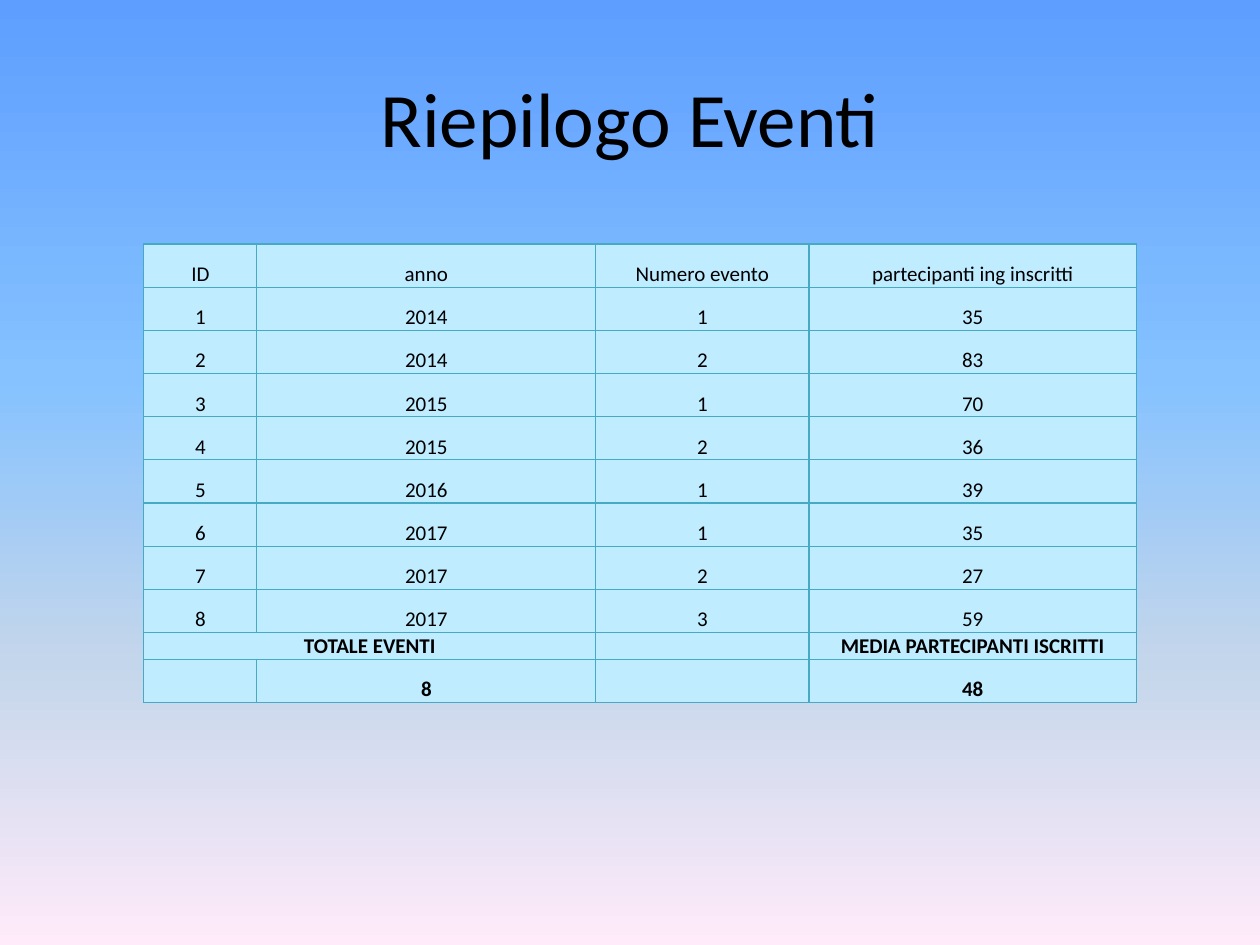
"""Build the event summary slide with its table of yearly events."""
from typing import NamedTuple

from lxml.etree import SubElement as Sub
from pptx import Presentation
from pptx.dml.color import RGBColor
from pptx.enum.text import MSO_ANCHOR as Anchor, PP_ALIGN as Align
from pptx.oxml.ns import qn
from pptx.util import Cm, Pt


class Event(NamedTuple):
    year: int
    number: int
    count: int


class Row(NamedTuple):
    texts: tuple
    bold: bool = False
    height: float = 0.87


FONT = "Calibri"
BLACK, PALE, EDGE = "000000", "BFECFF", "46AAC5"
STOPS = ((0, "5E9EFF"), (40, "85C2FF"), (70, "C4D6EB"), (100, "FFEBFA"))
WIDTHS = (2.28, 6.83, 4.3, 6.6)
EVENTS = (
    Event(2014, 1, 35), Event(2014, 2, 83), Event(2015, 1, 70), Event(2015, 2, 36),
    Event(2016, 1, 39), Event(2017, 1, 35), Event(2017, 2, 27), Event(2017, 3, 59),
)


def color(code: str) -> RGBColor:
    return RGBColor.from_string(code)


def style(frame, size: float, bold: bool = False) -> None:
    for para in frame.paragraphs:
        para.alignment = Align.CENTER
        for run in para.runs:
            font = run.font
            font.name, font.size, font.bold = FONT, Pt(size), bold
            font.color.rgb = color(BLACK)
        if not para.runs:
            Sub(para._p, qn("a:endParaRPr"), sz=str(int(size * 100)))


def paint(slide) -> None:
    fill = slide.background.fill
    fill.gradient()
    fill.gradient_angle = 270
    stops = next(slide._element.iter(qn("a:gsLst")))
    for old in list(stops):
        stops.remove(old)
    for place, code in STOPS:
        stop = Sub(stops, qn("a:gs"), pos=str(place * 1000))
        Sub(stop, qn("a:srgbClr"), val=code)


def border(cell) -> None:
    props = cell._tc.get_or_add_tcPr()
    for side in "LRTB":
        line = Sub(props, qn(f"a:ln{side}"), w=str(Pt(0.75)))
        Sub(Sub(line, qn("a:solidFill")), qn("a:srgbClr"), val=EDGE)


def dress(cell, text: str, bold: bool) -> None:
    border(cell)
    cell.fill.solid()
    cell.fill.fore_color.rgb = color(PALE)
    cell.margin_left = cell.margin_right = cell.margin_top = Cm(0.02)
    cell.margin_bottom = 0
    cell.vertical_anchor = Anchor.BOTTOM
    cell.text_frame.text = text
    style(cell.text_frame, 12, bold)


def list_rows() -> list[Row]:
    total = len(EVENTS)
    mean = round(sum(event.count for event in EVENTS) / total)
    return [
        Row(("ID", "anno", "Numero evento", "partecipanti ing inscritti")),
        *(Row((str(num), *map(str, event))) for num, event in enumerate(EVENTS, 1)),
        Row(("TOTALE EVENTI", "", "", "MEDIA PARTECIPANTI ISCRITTI"), True, 0.54),
        Row(("", str(total), "", str(mean)), True),
    ]


def add_grid(slide, rows: list[Row]) -> None:
    high = sum(row.height for row in rows)
    frame = slide.shapes.add_table(
        len(rows), len(WIDTHS), Cm(2.9), Cm(4.92), Cm(sum(WIDTHS)), Cm(high))
    table = frame.table
    table.first_row = table.horz_banding = False
    for col, width in zip(table.columns, WIDTHS):
        col.width = Cm(width)
    for line, row in zip(table.rows, rows):
        line.height = Cm(row.height)
        for cell, text in zip(line.cells, row.texts):
            dress(cell, text, row.bold)
    last = len(rows) - 2
    table.cell(last, 0).merge(table.cell(last, 1))


def add_title(slide) -> None:
    title = slide.shapes.title
    title.left, title.top = Cm(1.27), Cm(0.76)
    title.width, title.height = Cm(22.86), Cm(3.18)
    title.text_frame.text = "Riepilogo Eventi"
    title.text_frame.vertical_anchor = Anchor.MIDDLE
    style(title.text_frame, 44)


def main() -> None:
    deck = Presentation()
    deck.slide_width, deck.slide_height = Cm(25.4), Cm(19.05)
    slide = deck.slides.add_slide(deck.slide_layouts[5])
    paint(slide)
    add_title(slide)
    add_grid(slide, list_rows())
    deck.save("out.pptx")


if __name__ == "__main__":
    main()
